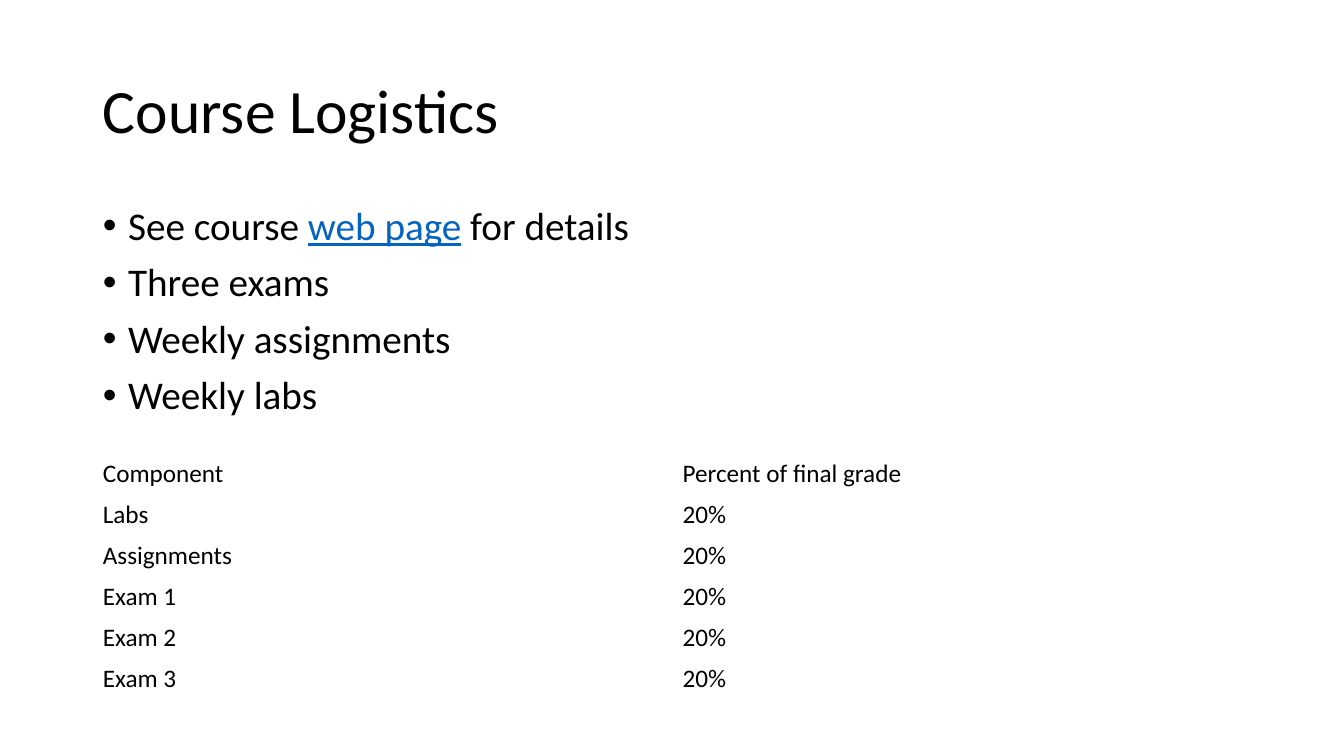
from lxml import etree
from pptx import Presentation
from pptx.dml.color import RGBColor
from pptx.enum import text
from pptx.oxml import ns
from pptx.util import Inches, Pt

BLACK = RGBColor(0x00, 0x00, 0x00)
WHITE = RGBColor(0xFF, 0xFF, 0xFF)
LINK_BLUE = RGBColor(0x05, 0x63, 0xC1)
FONT = "Calibri"
NO_STYLE_NO_GRID = "{2D5ABB26-0587-4C30-8999-92F81FD0307C}"

LEFT, WIDTH = 0.92, 11.5
TITLE_BOX = (LEFT, 0.4, WIDTH, 1.45)
BODY_BOX = (LEFT, 2, WIDTH, 4.76)
TABLE_BOX = (LEFT, 4.5, WIDTH, 2.4)

BULLETS = [
    [("See course ", False), ("web page", True), (" for details", False)],
    [("Three exams", False)],
    [("Weekly assignments", False)],
    [("Weekly labs", False)],
]
GRADES = [
    ("Component", "Percent of final grade"),
    ("Labs", "20%"),
    ("Assignments", "20%"),
    ("Exam 1", "20%"),
    ("Exam 2", "20%"),
    ("Exam 3", "20%"),
]


def place(shape, box):
    """Move and size a shape to a box given in inches."""
    shape.left, shape.top, shape.width, shape.height = map(Inches, box)


def add_span(para, words, size, color=BLACK, underline=False):
    """Add one formatted run to a paragraph."""
    span = para.add_run()
    span.text = words
    span.font.name = FONT
    span.font.size = Pt(size)
    span.font.bold = False
    span.font.underline = underline
    span.font.color.rgb = color


def set_bullet(para, indent):
    """Give a paragraph a round bullet with a hanging indent."""
    properties = para._p.get_or_add_pPr()
    properties.set("marL", str(Inches(indent)))
    properties.set("indent", str(Inches(-indent)))
    etree.SubElement(properties, ns.qn("a:buFont"), typeface="Arial")
    etree.SubElement(properties, ns.qn("a:buChar"), char="•")


def fill_title(page, box, words):
    """Place the title and write its text."""
    title = page.shapes.title
    place(title, box)
    frame = title.text_frame
    frame.vertical_anchor = text.MSO_ANCHOR.MIDDLE
    frame.auto_size = text.MSO_AUTO_SIZE.NONE
    para = frame.paragraphs[0]
    para.alignment = text.PP_ALIGN.LEFT
    para.line_spacing = 0.9
    add_span(para, words, 44)


def fill_body(page, box, bullets):
    """Place the body and write its bulleted list."""
    body = page.placeholders[1]
    place(body, box)
    frame = body.text_frame
    frame.vertical_anchor = text.MSO_ANCHOR.TOP
    frame.auto_size = text.MSO_AUTO_SIZE.NONE
    for index, spans in enumerate(bullets):
        para = frame.add_paragraph() if index else frame.paragraphs[0]
        para.line_spacing = 0.9
        para.space_before = Pt(10)
        set_bullet(para, 0.25)
        for words, linked in spans:
            add_span(para, words, 28, LINK_BLUE if linked else BLACK, linked)


def add_grades(page, box, rows):
    """Add the plain table of grade components."""
    frame = page.shapes.add_table(len(rows), len(rows[0]), *map(Inches, box))
    table = frame.table
    table.first_row = False
    table.horz_banding = False
    table._tbl.tblPr.find(ns.qn("a:tableStyleId")).text = NO_STYLE_NO_GRID
    for row, values in enumerate(rows):
        for column, words in enumerate(values):
            cell = table.cell(row, column)
            cell.fill.background()
            cell.vertical_anchor = text.MSO_ANCHOR.MIDDLE
            add_span(cell.text_frame.paragraphs[0], words, 18)


def build_logistics(deck):
    """Build the course logistics slide."""
    page = deck.slides.add_slide(deck.slide_layouts[1])
    page.background.fill.solid()
    page.background.fill.fore_color.rgb = WHITE
    fill_title(page, TITLE_BOX, "Course Logistics")
    fill_body(page, BODY_BOX, BULLETS)
    add_grades(page, TABLE_BOX, GRADES)


def main():
    """Create the deck and save it."""
    deck = Presentation()
    deck.slide_width, deck.slide_height = Inches(13.33), Inches(7.5)
    build_logistics(deck)
    deck.save("out.pptx")


if __name__ == "__main__":
    main()
